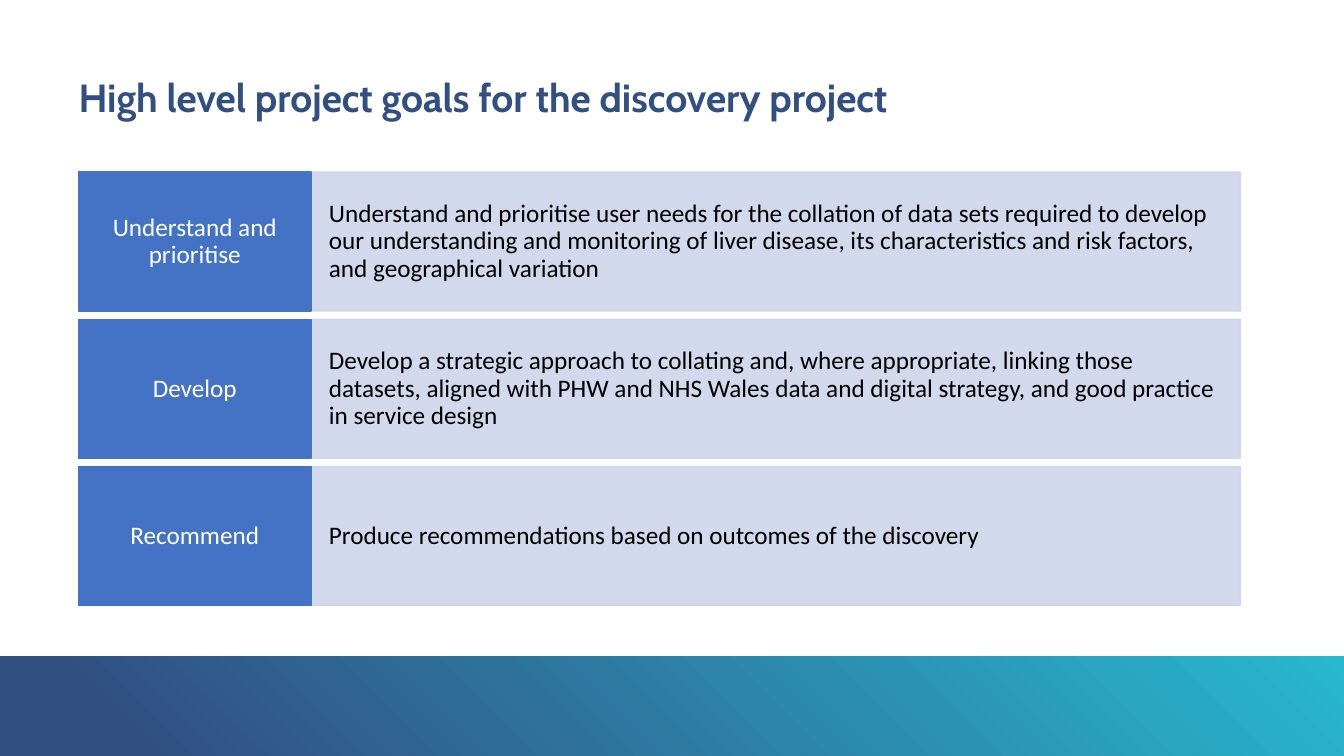
"""Build a slide of three project goals above a gradient band."""
from lxml import etree
from pptx import Presentation
from pptx.dml.color import RGBColor
from pptx.enum.shapes import MSO_SHAPE
from pptx.enum.text import MSO_ANCHOR, PP_ALIGN
from pptx.oxml.ns import qn
from pptx.util import Cm, Pt

RECT = MSO_SHAPE.RECTANGLE
TOP, MIDDLE = MSO_ANCHOR.TOP, MSO_ANCHOR.MIDDLE
LEFT, CENTER = PP_ALIGN.LEFT, PP_ALIGN.CENTER
NAVY = RGBColor(0x32, 0x4F, 0x82)
TEAL = RGBColor(0x28, 0xB8, 0xCE)
BLUE = RGBColor(0x44, 0x72, 0xC4)
PALE = RGBColor(0xCF, 0xD5, 0xEA)
BLACK = RGBColor(0, 0, 0)
WHITE = RGBColor(255, 255, 255)
WIDE, HIGH = 33.87, 19.05
EDGE = 1.98
GOALS = [
    ("Understand and prioritise",
     "Understand and prioritise user needs for the collation of data sets "
     "required to develop our understanding and monitoring of liver disease, "
     "its characteristics and risk factors, and geographical variation"),
    ("Develop",
     "Develop a strategic approach to collating and, where appropriate, "
     "linking those datasets, aligned with PHW and NHS Wales data and "
     "digital strategy, and good practice in service design"),
    ("Recommend",
     "Produce recommendations based on outcomes of the discovery"),
]


def write(shape, text, font="Calibri", size=18, color=BLACK, bold=False,
          align=LEFT, anchor=MIDDLE, pad=(0, 0)):
    frame = shape.text_frame
    frame.word_wrap = True
    frame.vertical_anchor = anchor
    frame.margin_left = frame.margin_right = Cm(pad[0])
    frame.margin_top = frame.margin_bottom = Cm(pad[1])
    para = frame.paragraphs[0]
    para.text = text
    para.alignment = align
    para.line_spacing = 0.9
    para.font.name = font
    para.font.size = Pt(size)
    para.font.bold = bold
    para.font.color.rgb = color


class Deck:
    def __init__(self, slide, head="Cabin", body="Calibri"):
        self.slide, self.head, self.body = slide, head, body

    def rect(self, x, y, w, h):
        shape = self.slide.shapes.add_shape(RECT, Cm(x), Cm(y), Cm(w), Cm(h))
        shape.shadow.inherit = False
        return shape

    def band(self, y, h):
        shape = self.rect(0, y, WIDE, h)
        shape.line.fill.background()
        shape.fill.gradient()
        shape.fill.gradient_angle = 45
        stops = shape.fill.gradient_stops
        for stop, color, place in zip(stops, (NAVY, TEAL), (0.1, 1)):
            stop.color.rgb = color
            stop.position = place

    def title(self, x, y, w, h, text):
        box = self.slide.shapes.add_textbox(Cm(x), Cm(y), Cm(w), Cm(h))
        write(box, text, font=self.head, size=28, color=NAVY, bold=True,
              anchor=TOP)

    def block(self, x, y, w, h, text, fill, alpha=100, **style):
        shape = self.rect(x, y, w, h)
        shape.fill.solid()
        shape.fill.fore_color.rgb = fill
        shape.line.color.rgb = fill
        shape.line.width = Pt(1)
        if alpha < 100:
            for tint in shape.element.spPr.iter(qn("a:srgbClr")):
                etree.SubElement(tint, qn("a:alpha"), val=str(alpha * 1000))
        write(shape, text, font=self.body, **style)


def main():
    prs = Presentation()
    prs.slide_width, prs.slide_height = Cm(WIDE), Cm(HIGH)
    deck = Deck(prs.slides.add_slide(prs.slide_layouts[6]))
    deck.band(16.54, 2.51)
    deck.title(EDGE, 1.98, 29.9, 1.09,
               "High level project goals for the discovery project")
    name_w, goal_w, row_h, step = 5.86, 23.42, 3.5, 3.71
    for row, (name, goal) in enumerate(GOALS):
        y = 4.34 + row * step
        deck.block(EDGE + name_w, y, goal_w, row_h, goal, PALE, alpha=90,
                   pad=(0.45, 0.89))
        deck.block(EDGE, y, name_w, row_h, name, BLUE, color=WHITE,
                   align=CENTER, pad=(0.3, 0.36))
    prs.save("out.pptx")


if __name__ == "__main__":
    main()
